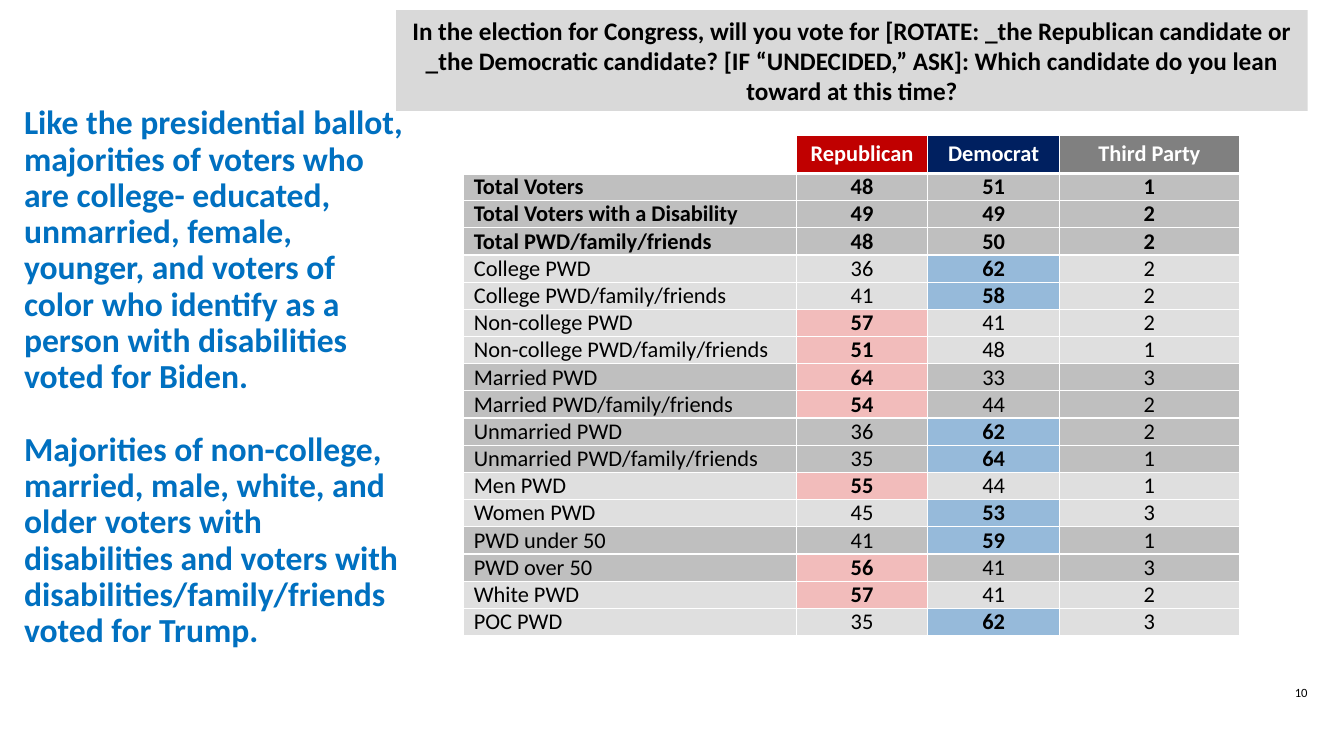
from lxml.etree import SubElement
from pptx import Presentation
from pptx.dml.color import RGBColor
from pptx.enum.shapes import MSO_SHAPE
from pptx.enum.text import MSO_ANCHOR, PP_ALIGN
from pptx.oxml.ns import qn
from pptx.util import Inches, Pt

# Content
ASK = ("In the election for Congress, will you vote for [ROTATE: _the Republican "
       "candidate or _the Democratic candidate? [IF “UNDECIDED,” ASK]: Which "
       "candidate do you lean toward at this time?")
NOTES = [
    "Like the presidential ballot, majorities of voters who are college- educated, "
    "unmarried, female, younger, and voters of color who identify as a person with "
    "disabilities voted for Biden.",
    "Majorities of non-college, married, male, white, and older voters with "
    "disabilities and voters with disabilities/family/friends voted for Trump.",
]
PAGE = "10"
HEADS = [("", "white"), ("Republican", "red"), ("Democrat", "navy"), ("Third Party", "gray")]
# Each group of rows has its own band colour; totals are bold throughout
GROUPS = [
    ("dark", True, [("Total Voters", 48, 51, 1),
                    ("Total Voters with a Disability", 49, 49, 2),
                    ("Total PWD/family/friends", 48, 50, 2)]),
    ("light", False, [("College PWD", 36, 62, 2),
                      ("College PWD/family/friends", 41, 58, 2),
                      ("Non-college PWD", 57, 41, 2),
                      ("Non-college PWD/family/friends", 51, 48, 1)]),
    ("dark", False, [("Married PWD", 64, 33, 3),
                     ("Married PWD/family/friends", 54, 44, 2),
                     ("Unmarried PWD", 36, 62, 2),
                     ("Unmarried PWD/family/friends", 35, 64, 1)]),
    ("light", False, [("Men PWD", 55, 44, 1), ("Women PWD", 45, 53, 3)]),
    ("dark", False, [("PWD under 50", 41, 59, 1), ("PWD over 50", 56, 41, 3)]),
    ("light", False, [("White PWD", 57, 41, 2), ("POC PWD", 35, 62, 3)]),
]
COLS = [3.3, 1.3, 1.31, 1.78]
HEAD_H, ROW_H = 0.38, 0.27

THEME = {
    "font": "Calibri",
    "size": {"ask": 18, "note": 24, "cell": 16, "page": 9},
    "color": {"white": "FFFFFF", "black": "000000", "blue": "0070C0", "red": "C00000",
              "navy": "002060", "gray": "808080", "dark": "BFBFBF", "light": "DFDFDF",
              "panel": "D9D9D9", "pink": "F2BCBB", "sky": "96BADA"},
}


def tint(name):
    return RGBColor.from_string(THEME["color"][name])


def paint(item, name):
    item.fill.solid()
    item.fill.fore_color.rgb = tint(name)


def write(para, text, kind, color="black", bold=False, align=PP_ALIGN.CENTER):
    para.alignment = align
    run = para.add_run()
    run.text = text
    font = run.font
    font.name, font.size, font.bold = THEME["font"], Pt(THEME["size"][kind]), bold
    font.color.rgb = tint(color)


def edge(cell, base):
    props = cell._tc.get_or_add_tcPr()
    for tag, width in (("lnL", 1), ("lnR", 1), ("lnT", 1), ("lnB", base)):
        line = SubElement(props, qn("a:" + tag), w=str(Pt(width)))
        fill = SubElement(line, qn("a:solidFill"))
        SubElement(fill, qn("a:srgbClr"), val=THEME["color"]["white"])


def fill_cell(cell, text, fill, color="black", bold=False, align=PP_ALIGN.CENTER, base=1):
    edge(cell, base)
    paint(cell, fill)
    cell.vertical_anchor = MSO_ANCHOR.MIDDLE
    cell.margin_top = cell.margin_bottom = 0
    if text:
        write(cell.text_frame.paragraphs[0], text, "cell", color, bold, align)


deck = Presentation()
deck.slide_width, deck.slide_height = Inches(13.33), Inches(7.5)
slide = deck.slides.add_slide(deck.slide_layouts[6])
shapes = slide.shapes


def add_text(x, y, w, h):
    frame = shapes.add_textbox(Inches(x), Inches(y), Inches(w), Inches(h)).text_frame
    frame.word_wrap = True
    return frame


# Page number
write(add_text(12.53, 6.75, 0.75, 0.33).paragraphs[0], PAGE, "page")

# Vote table
rows = [(band, total, row) for band, total, group in GROUPS for row in group]
table = shapes.add_table(len(rows) + 1, len(COLS), Inches(4.6), Inches(1.34),
                         Inches(sum(COLS)), Inches(HEAD_H + ROW_H * len(rows))).table
table.horz_banding = False
for col, width in zip(table.columns, COLS):
    col.width = Inches(width)
table.rows[0].height = Inches(HEAD_H)
for c, (head, fill) in enumerate(HEADS):
    fill_cell(table.cell(0, c), head, fill, "white", True, base=3)
for r, (band, total, row) in enumerate(rows, 1):
    table.rows[r].height = Inches(ROW_H)
    best = max(row[1:])
    for c, value in enumerate(row):
        won = c > 0 and not total and value == best
        fill = ("pink" if c == 1 else "sky") if won else band
        align = PP_ALIGN.CENTER if c else PP_ALIGN.LEFT
        fill_cell(table.cell(r, c), str(value), fill, bold=total or won, align=align)

# Question panel
panel = shapes.add_shape(MSO_SHAPE.RECTANGLE, Inches(3.93), Inches(0.1),
                         Inches(9.04), Inches(1))
panel.shadow.inherit = False
paint(panel, "panel")
panel.line.fill.background()
frame = panel.text_frame
frame.word_wrap = True
frame.vertical_anchor = MSO_ANCHOR.MIDDLE
write(frame.paragraphs[0], ASK, "ask", bold=True)

# Takeaways on the left
frame = add_text(0.14, 0.96, 3.96, 6.34)
frame.margin_top = Inches(0.09)
for i, note in enumerate(NOTES):
    para = frame.add_paragraph() if i else frame.paragraphs[0]
    para.line_spacing = 0.9
    if i:
        para.space_before = Pt(26)
    write(para, note, "note", "blue", True, PP_ALIGN.LEFT)

deck.save("out.pptx")
